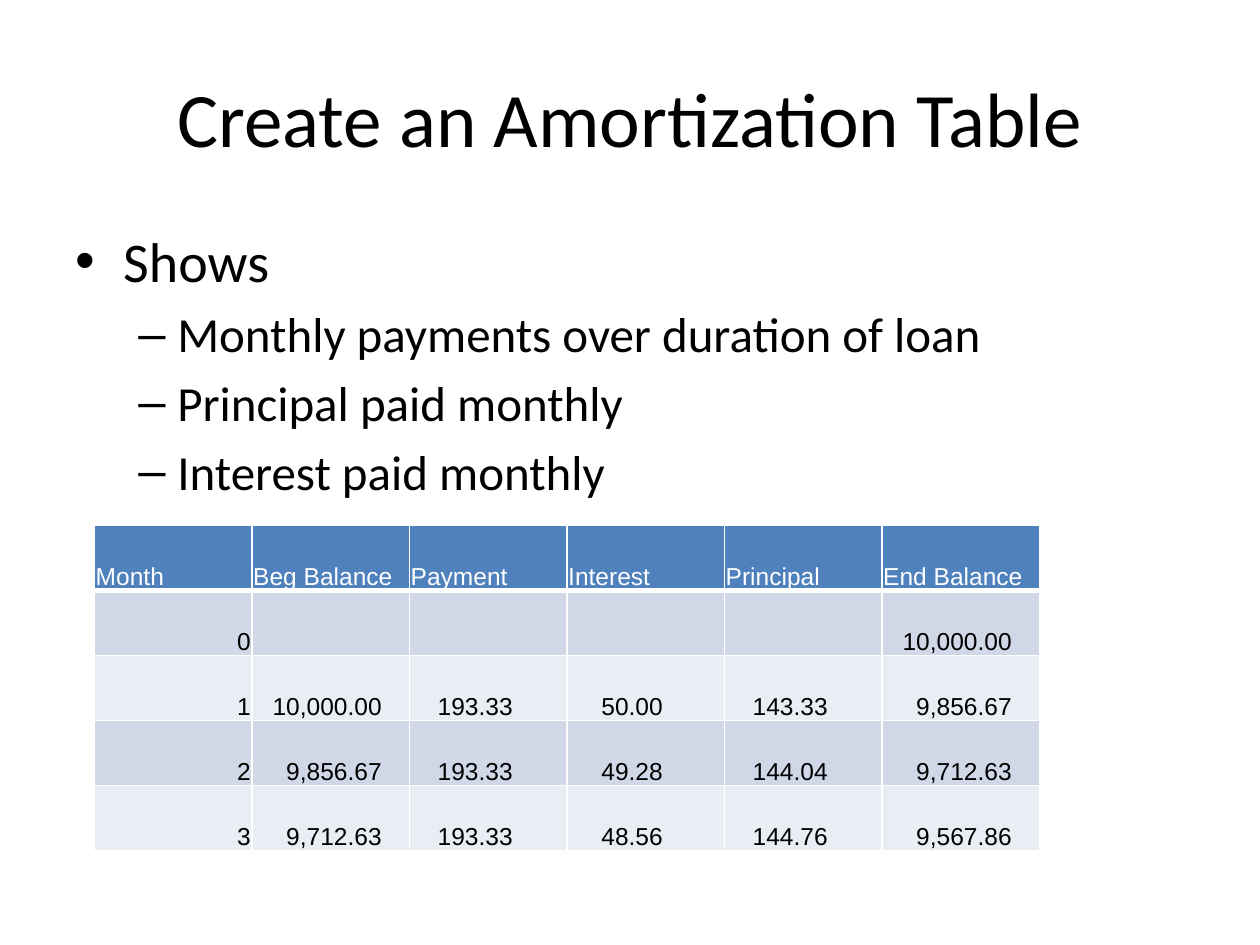
from pptx import Presentation
from pptx import util as u
from pptx.dml.color import RGBColor
from pptx.enum import text
from pptx.oxml import parse_xml
from pptx.oxml.ns import nsdecls

TITLE = "Create an Amortization Table"

# (level, text)
BULLETS = [
    (0, "Shows"),
    (1, "Monthly payments over duration of loan"),
    (1, "Principal paid monthly"),
    (1, "Interest paid monthly"),
]
# bullet sign, text size, left indent, hanging indent for each level
LEVELS = [("•", 32, 0.38, 0.38), ("–", 28, 0.81, 0.31)]

# (heading, right inset of the numbers)
COLUMNS = [("Month", 0.01), ("Beg Balance", 0.22), ("Payment", 0.43),
           ("Interest", 0.49), ("Principal", 0.43), ("End Balance", 0.22)]
PAYMENTS = [
    ("0", "", "", "", "", "10,000.00"),
    ("1", "10,000.00", "193.33", "50.00", "143.33", "9,856.67"),
    ("2", "9,856.67", "193.33", "49.28", "144.04", "9,712.63"),
    ("3", "9,712.63", "193.33", "48.56", "144.76", "9,567.86"),
]
HEADER_FILL, BAND_FILLS = "4F81BD", ("D0D8E8", "E9EDF4")
COL_W, ROW_H = 1.25, 0.516


def rgb(value):
    return RGBColor.from_string(value)


def set_font(p, name, size, color):
    p.font.name, p.font.size = name, u.Pt(size)
    p.font.color.rgb = rgb(color)


def add_box(slide, left, top, width, height, anchor):
    box = slide.shapes.add_textbox(*map(u.Inches, (left, top, width, height)))
    tf = box.text_frame
    tf.word_wrap = True
    tf.vertical_anchor = anchor
    return tf


def set_bullet(p, sign, left, hang):
    pPr = p._p.get_or_add_pPr()
    pPr.set("marL", str(u.Inches(left)))
    pPr.set("indent", str(-u.Inches(hang)))
    font = parse_xml(f'<a:buFont {nsdecls("a")} typeface="Arial"/>')
    char = parse_xml(f'<a:buChar {nsdecls("a")} char="{sign}"/>')
    at = 1 if p.space_before is not None else 0
    pPr.insert(at, font)
    pPr.insert(at + 1, char)


def set_borders(cell, top, bottom):
    tcPr = cell._tc.get_or_add_tcPr()
    for side, width in (("L", 1), ("R", 1), ("T", top), ("B", bottom)):
        tcPr.append(parse_xml(
            f'<a:ln{side} {nsdecls("a")} w="{u.Pt(width)}"><a:solidFill>'
            f'<a:srgbClr val="FFFFFF"/></a:solidFill></a:ln{side}>'))


prs = Presentation()
prs.slide_width, prs.slide_height = u.Inches(10), u.Inches(7.5)
s = prs.slides.add_slide(prs.slide_layouts[6])

# Title
p = add_box(s, 0.5, 0.3, 9, 1.25, text.MSO_ANCHOR.MIDDLE).paragraphs[0]
p.text = TITLE
p.alignment = text.PP_ALIGN.CENTER
set_font(p, "Calibri", 44, "000000")

# Bullet list
tf = add_box(s, 0.5, 1.75, 9, 4.95, text.MSO_ANCHOR.TOP)
for i, (level, line) in enumerate(BULLETS):
    p = tf.paragraphs[0] if i == 0 else tf.add_paragraph()
    sign, size, left, hang = LEVELS[level]
    p.text, p.level = line, level
    p.space_before = u.Pt(size * 0.2)
    set_font(p, "Calibri", size, "000000")
    set_bullet(p, sign, left, hang)

# Amortization table
rows = [[heading for heading, _ in COLUMNS]] + PAYMENTS
table = s.shapes.add_table(
    len(rows), len(COLUMNS), u.Inches(0.75), u.Inches(4.17),
    u.Inches(COL_W * len(COLUMNS)), u.Inches(ROW_H * len(rows))).table
for r, row in enumerate(rows):
    header = r == 0
    for c, value in enumerate(row):
        cell = table.cell(r, c)
        cell.margin_left = cell.margin_top = u.Inches(0.01)
        cell.margin_right = u.Inches(0.01 if header else COLUMNS[c][1])
        cell.margin_bottom = 0
        cell.vertical_anchor = text.MSO_ANCHOR.BOTTOM
        p = cell.text_frame.paragraphs[0]
        p.text = value
        p.alignment = text.PP_ALIGN.LEFT if header else text.PP_ALIGN.RIGHT
        set_font(p, "Arial", 14, "FFFFFF" if header else "000000")
        p.font.bold = False
        set_borders(cell, top=3 if r == 1 else 1, bottom=3 if header else 1)
        cell.fill.solid()
        cell.fill.fore_color.rgb = rgb(
            HEADER_FILL if header else BAND_FILLS[(r - 1) % 2])

prs.save("out.pptx")
